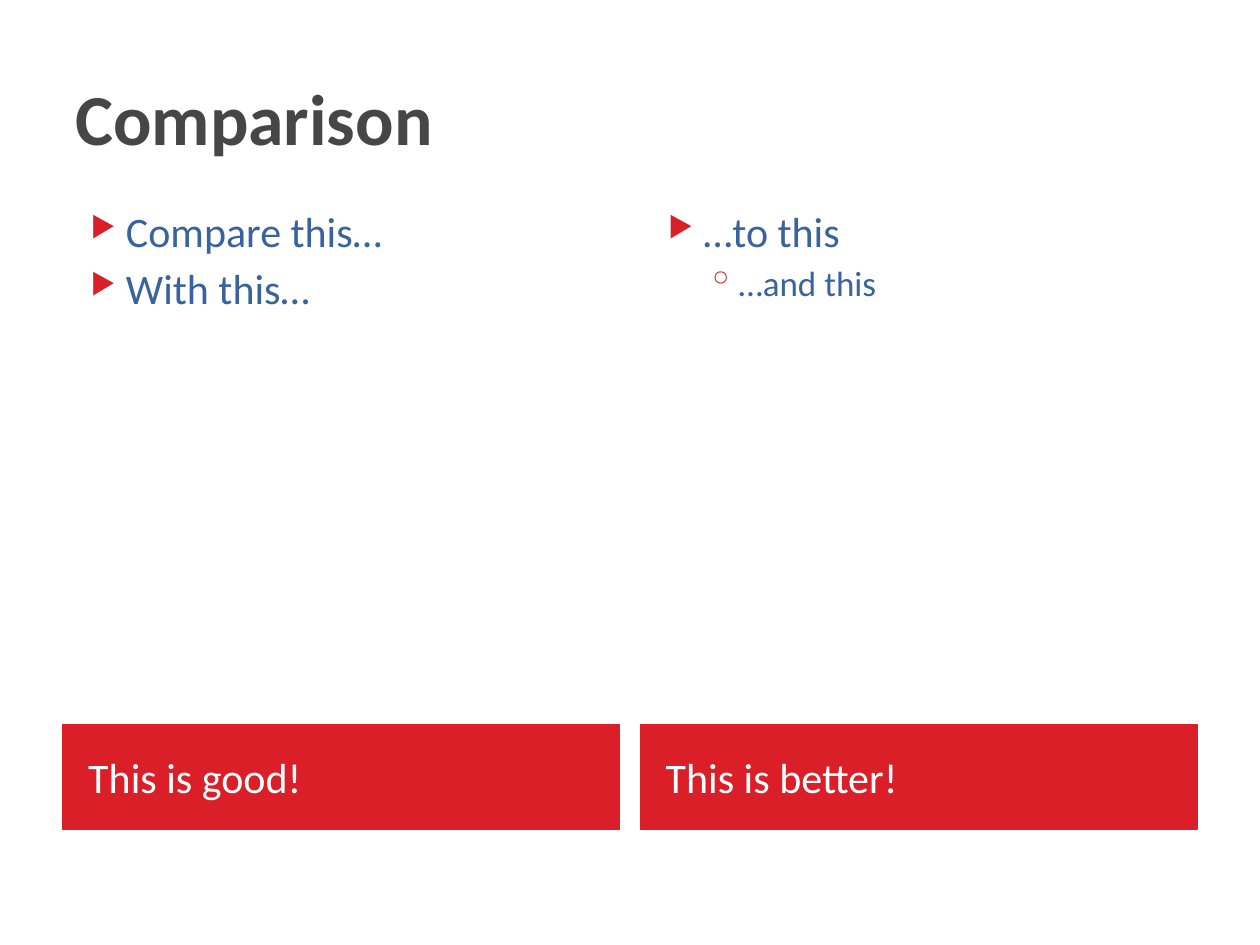
from dataclasses import dataclass

from lxml.etree import SubElement
from pptx import Presentation
from pptx.dml.color import RGBColor as Color
from pptx.enum.shapes import MSO_SHAPE as Shape
from pptx.enum.text import MSO_ANCHOR as Anchor, PP_ALIGN as Align
from pptx.oxml.ns import qn
from pptx.util import Cm, Pt


@dataclass(frozen=True)
class Theme:
    font: str = "Calibri"
    title_color: Color = Color(0x46, 0x46, 0x46)
    body_color: Color = Color(0x39, 0x63, 0x9D)
    accent: Color = Color(0xDA, 0x1F, 0x28)
    on_accent: Color = Color(0xFF, 0xFF, 0xFF)
    title_size: float = 41
    body_size: float = 24
    sub_size: float = 20


@dataclass(frozen=True)
class BulletLevel:
    symbol: str
    percent: int
    margin: float
    hanging: float
    size: float
    space_before: float


class SlideBuilder:
    def __init__(self, slide, theme):
        self.slide = slide
        self.theme = theme
        self.levels = [
            BulletLevel("▶", 68, 1.02, 0.71, theme.body_size, 4),
            BulletLevel("◦", 100, 1.73, 0.64, theme.sub_size, 3.2),
        ]

    def style(self, paragraph, size, color, bold=False):
        paragraph.alignment = Align.LEFT
        for run in paragraph.runs:
            run.font.name = self.theme.font
            run.font.size = Pt(size)
            run.font.bold = bold
            run.font.color.rgb = color

    def text_box(self, left, top, width, height, anchor=Anchor.TOP):
        box = self.slide.shapes.add_textbox(Cm(left), Cm(top), Cm(width), Cm(height))
        text_frame = box.text_frame
        text_frame.word_wrap = True
        text_frame.vertical_anchor = anchor
        return text_frame

    def title(self, text, left, top, width, height):
        text_frame = self.text_box(left, top, width, height, Anchor.MIDDLE)
        text_frame.text = text
        self.style(text_frame.paragraphs[0], self.theme.title_size,
                   self.theme.title_color, bold=True)

    def banner(self, text, left, top, width, height):
        shape = self.slide.shapes.add_shape(
            Shape.RECTANGLE, Cm(left), Cm(top), Cm(width), Cm(height))
        shape.shadow.inherit = False
        shape.fill.solid()
        shape.fill.fore_color.rgb = self.theme.accent
        shape.line.color.rgb = self.theme.accent
        shape.line.width = Pt(0.75)
        text_frame = shape.text_frame
        text_frame.word_wrap = True
        text_frame.vertical_anchor = Anchor.MIDDLE
        text_frame.margin_left = Cm(0.51)
        text_frame.text = text
        self.style(text_frame.paragraphs[0], self.theme.body_size, self.theme.on_accent)

    def add_bullet(self, paragraph, level):
        properties = paragraph._p.get_or_add_pPr()
        properties.set("marL", str(Cm(level.margin)))
        properties.set("indent", str(-Cm(level.hanging)))
        color = SubElement(properties, qn("a:buClr"))
        SubElement(color, qn("a:srgbClr"), val=str(self.theme.accent))
        SubElement(properties, qn("a:buSzPct"), val=str(level.percent * 1000))
        SubElement(properties, qn("a:buChar"), char=level.symbol)

    def bullet_list(self, items, left, top, width, height):
        """Fill a text box with bullets; items are (level number, text) pairs."""
        text_frame = self.text_box(left, top, width, height)
        text_frame.text = "\n".join(text for _, text in items)
        for index, (number, _) in enumerate(items):
            paragraph = text_frame.paragraphs[index]
            level = self.levels[number]
            paragraph.level = number
            self.add_bullet(paragraph, level)
            paragraph.space_before = Pt(level.space_before if index else 0)
            self.style(paragraph, level.size, self.theme.body_color)


def main():
    presentation = Presentation()
    presentation.slide_width = Cm(25.4)
    presentation.slide_height = Cm(19.05)
    slide = presentation.slides.add_slide(presentation.slide_layouts[6])
    builder = SlideBuilder(slide, Theme())

    margin, content_width, gap = 1.27, 22.86, 0.42
    column_width = (content_width - gap) / 2
    columns = [
        ([(0, "Compare this…"), (0, "With this…")], "This is good!"),
        ([(0, "…to this"), (1, "…and this")], "This is better!"),
    ]

    builder.title("Comparison", margin, 0.76, content_width, 3.18)
    for index, (items, verdict) in enumerate(columns):
        left = margin + index * (column_width + gap)
        builder.bullet_list(items, left, 4.01, column_width, 10.39)
        builder.banner(verdict, left, 14.6, column_width, 2.12)

    presentation.save("out.pptx")


if __name__ == "__main__":
    main()
